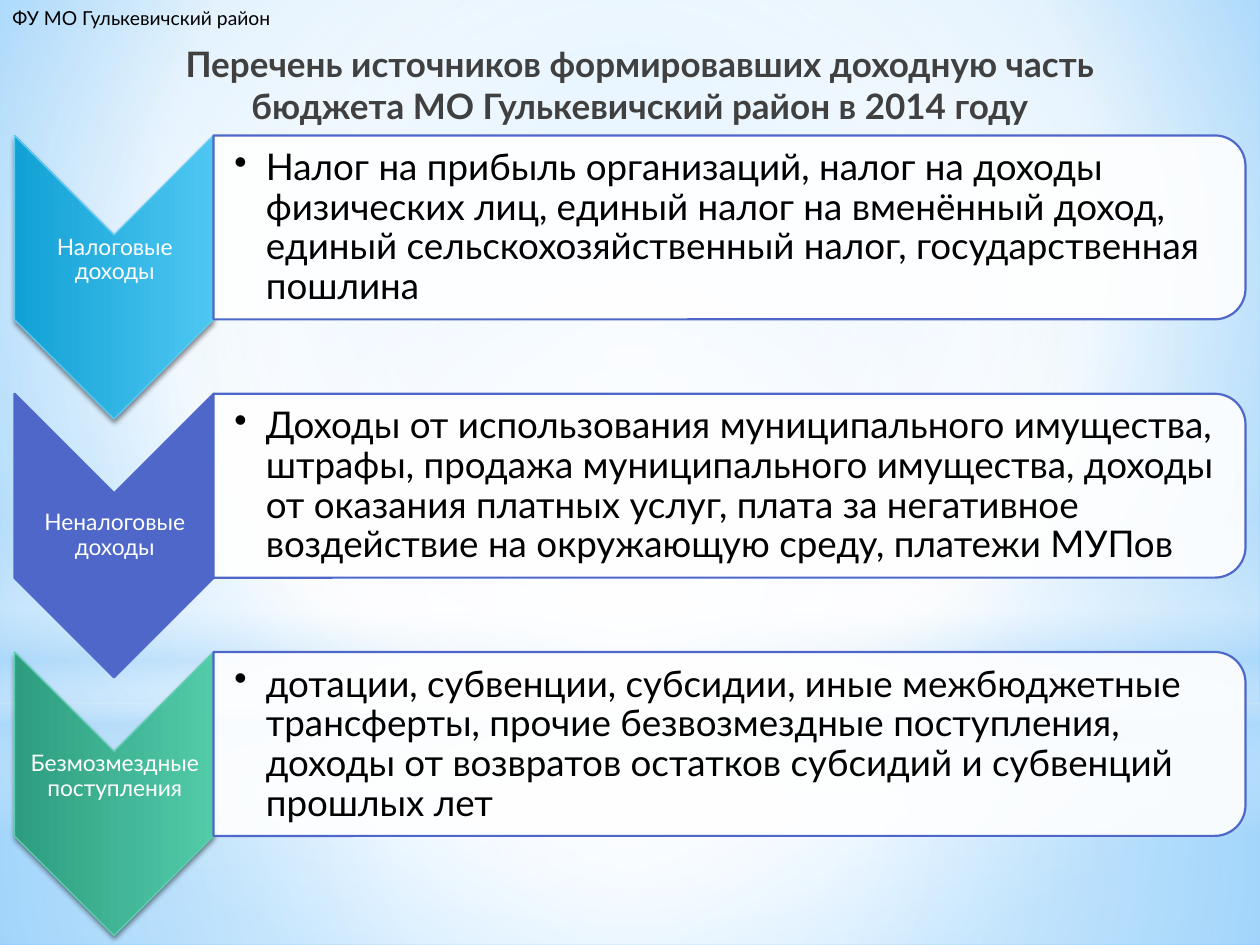
"""Build a slide listing the sources of district budget revenue."""
from lxml.etree import SubElement
from pptx import Presentation
from pptx.dml.color import RGBColor
from pptx.enum.shapes import MSO_SHAPE
from pptx.enum.text import MSO_ANCHOR, PP_ALIGN
from pptx.oxml import parse_xml
from pptx.oxml.ns import nsdecls, qn
from pptx.util import Inches, Pt

FONT = "Lato"
WHITE = RGBColor(0xFF, 0xFF, 0xFF)
BLACK = RGBColor(0x00, 0x00, 0x00)
GRAY = RGBColor(0x40, 0x40, 0x40)
SKY = RGBColor(0x9E, 0xD5, 0xFF)
AZURE = RGBColor(0x5B, 0xB9, 0xFF)
PALE = RGBColor(0xB4, 0xDC, 0xFA)
INDIGO = RGBColor(0x4E, 0x67, 0xC8)
CYAN = RGBColor(0x4E, 0xC7, 0xF2)
CYAN_DARK = RGBColor(0x11, 0xA1, 0xD4)
CYAN_EDGE = RGBColor(0x5E, 0xCC, 0xF3)
GREEN = RGBColor(0x52, 0xCB, 0xA9)
GREEN_DARK = RGBColor(0x2E, 0x9D, 0x7F)
GREEN_EDGE = RGBColor(0x5D, 0xCE, 0xAF)


def set_gradient(properties, stops, focus=None):
    """Swap a solid fill for a circular gradient, or a vertical one without focus."""
    marks = "".join(
        f'<a:gs pos="{place * 1000}"><a:srgbClr val="{color}">'
        f'<a:alpha val="{alpha * 1000}"/></a:srgbClr></a:gs>'
        for place, color, alpha in stops)
    if focus:
        sides = " ".join(f'{side}="{share * 1000}"' for side, share in zip("ltrb", focus))
        direction = f'<a:path path="circle"><a:fillToRect {sides}/></a:path>'
    else:
        direction = '<a:lin ang="5400000" scaled="0"/>'
    gradient = parse_xml(f'<a:gradFill {nsdecls("a")} rotWithShape="1">'
                         f'<a:gsLst>{marks}</a:gsLst>{direction}</a:gradFill>')
    solid = properties.find(qn("a:solidFill"))
    properties.replace(solid, gradient)


def add_box(page, place, text, size, color):
    """Add a wrapped text box with a single formatted paragraph."""
    box = page.shapes.add_textbox(*map(Inches, place))
    frame = box.text_frame
    frame.word_wrap = True
    para = frame.paragraphs[0]
    para.text = text
    para.font.name, para.font.size = FONT, Pt(size)
    para.font.color.rgb = color
    return frame, para


deck = Presentation()
deck.slide_width, deck.slide_height = Inches(10), Inches(7.5)
page = deck.slides.add_slide(deck.slide_layouts[5])

page.background.fill.solid()
set_gradient(page.background.fill._xPr,
             [(0, SKY, 100), (60, WHITE, 100), (100, AZURE, 100)], (20, 10, 20, 60))

center = (50, 50, 50, 50)
backdrop = [
    (MSO_SHAPE.RECTANGLE, (0, 5.58, 10, 1.92), center,
     [(0, WHITE, 91), (37, WHITE, 76), (100, PALE, 79)]),
    (MSO_SHAPE.RECTANGLE, (0, 0, 10, 5.58), center,
     [(0, WHITE, 89), (48, WHITE, 62), (100, PALE, 79)]),
    (MSO_SHAPE.RECTANGLE, (0, 4.12, 10, 2.5), None,
     [(0, WHITE, 0), (29, WHITE, 30), (45, PALE, 40),
      (55, WHITE, 26), (65, PALE, 60), (100, WHITE, 0)]),
    (MSO_SHAPE.OVAL, (0, 1.75, 10, 5.58), center,
     [(0, WHITE, 100), (56, WHITE, 0)]),
]
for kind, place, focus, stops in backdrop:
    glow = page.shapes.add_shape(kind, *map(Inches, place))
    glow.shadow.inherit = False
    glow.line.fill.background()
    glow.fill.solid()
    set_gradient(glow.element.spPr, stops, focus)

title = page.shapes.title
title.element.getparent().append(title.element)
title.left, title.top, title.width, title.height = map(Inches, (0.75, 0.29, 8.66, 0.63))
title.text_frame.vertical_anchor = MSO_ANCHOR.TOP
para = title.text_frame.paragraphs[0]
para.text = "Перечень источников формировавших доходную часть бюджета МО Гулькевичский район в 2014 году"
para.alignment = PP_ALIGN.CENTER
para.font.name, para.font.size, para.font.bold = FONT, Pt(20), True
para.font.color.rgb = GRAY

sources = [
    ("Налоговые доходы",
     "Налог на прибыль организаций, налог на доходы физических лиц, единый налог на "
     "вменённый доход, единый сельскохозяйственный налог, государственная пошлина",
     (CYAN, CYAN_DARK), CYAN_EDGE, 0.28),
    ("Неналоговые доходы",
     "Доходы от использования муниципального имущества, штрафы, продажа муниципального "
     "имущества, доходы от оказания платных услуг, плата за негативное воздействие на "
     "окружающую среду, платежи МУПов",
     None, INDIGO, 0.01),
    ("Безмозмездные поступления",
     "дотации, субвенции, субсидии, иные межбюджетные трансферты, прочие безвозмездные "
     "поступления, доходы от возвратов остатков субсидий и субвенций прошлых лет",
     (GREEN, GREEN_DARK), GREEN_EDGE, 0.28),
]
ROW_STEP = 2.05
for row, (name, details, shades, edge, label_lift) in enumerate(sources):
    drop = row * ROW_STEP

    arrow = page.shapes.add_shape(
        MSO_SHAPE.CHEVRON, *map(Inches, (-0.22, 1.41 + drop, 2.25, 1.58)))
    arrow.rotation = 90
    arrow.shadow.inherit = False
    arrow.fill.solid()
    arrow.fill.fore_color.rgb = edge
    arrow.line.color.rgb = edge
    arrow.line.width = Pt(0.75 if shades else 1.25)
    if shades:
        light, dark = shades
        set_gradient(arrow.element.spPr, [(0, light, 100), (100, dark, 100)])
        effects = arrow.element.spPr.find(qn("a:effectLst"))
        shadow = SubElement(effects, qn("a:outerShdw"), blurRad=str(Pt(3.1)),
                            dist=str(Pt(1.8)), dir="5400000", rotWithShape="0")
        tint = SubElement(shadow, qn("a:srgbClr"), val=str(BLACK))
        SubElement(tint, qn("a:alpha"), val="45000")

    frame, para = add_box(page, (0.12, 1.86 + drop, 1.58, 0.68), name, 13, WHITE)
    frame.vertical_anchor = MSO_ANCHOR.MIDDLE
    frame.margin_left = frame.margin_right = frame.margin_top = Inches(0.01)
    frame.margin_bottom = Inches(label_lift)
    para.alignment = PP_ALIGN.CENTER
    para.line_spacing = 0.9

    panel = page.shapes.add_shape(
        MSO_SHAPE.ROUND_2_SAME_RECTANGLE, *map(Inches, (5.06, -2.29 + drop, 1.46, 8.19)))
    panel.rotation = 90
    panel.shadow.inherit = False
    panel.fill.solid()
    panel.fill.fore_color.rgb = WHITE
    tint = panel.element.spPr.find(qn("a:solidFill")).find(qn("a:srgbClr"))
    SubElement(tint, qn("a:alpha"), val="90000")
    panel.line.color.rgb = INDIGO
    panel.line.width = Pt(1.25)

    frame, para = add_box(page, (1.7, 1.15 + drop, 8.12, 1.32), details, 21, BLACK)
    frame.vertical_anchor = MSO_ANCHOR.MIDDLE
    frame.margin_left = Inches(0.16)
    frame.margin_right = frame.margin_top = frame.margin_bottom = Inches(0.01)
    para.level = 1
    para.line_spacing = 0.9
    layout = para._p.get_or_add_pPr()
    layout.set("marL", str(Inches(0.25)))
    layout.set("indent", str(Inches(-0.25)))
    bullet = parse_xml(f'<a:buChar {nsdecls("a")} char="•"/>')
    layout.insert_element_before(bullet, "a:tabLst", "a:defRPr", "a:extLst")

frame, para = add_box(page, (0, 0, 2.25, 0.29), "ФУ МО Гулькевичский район", 11, BLACK)
frame.word_wrap = False

deck.save("out.pptx")
